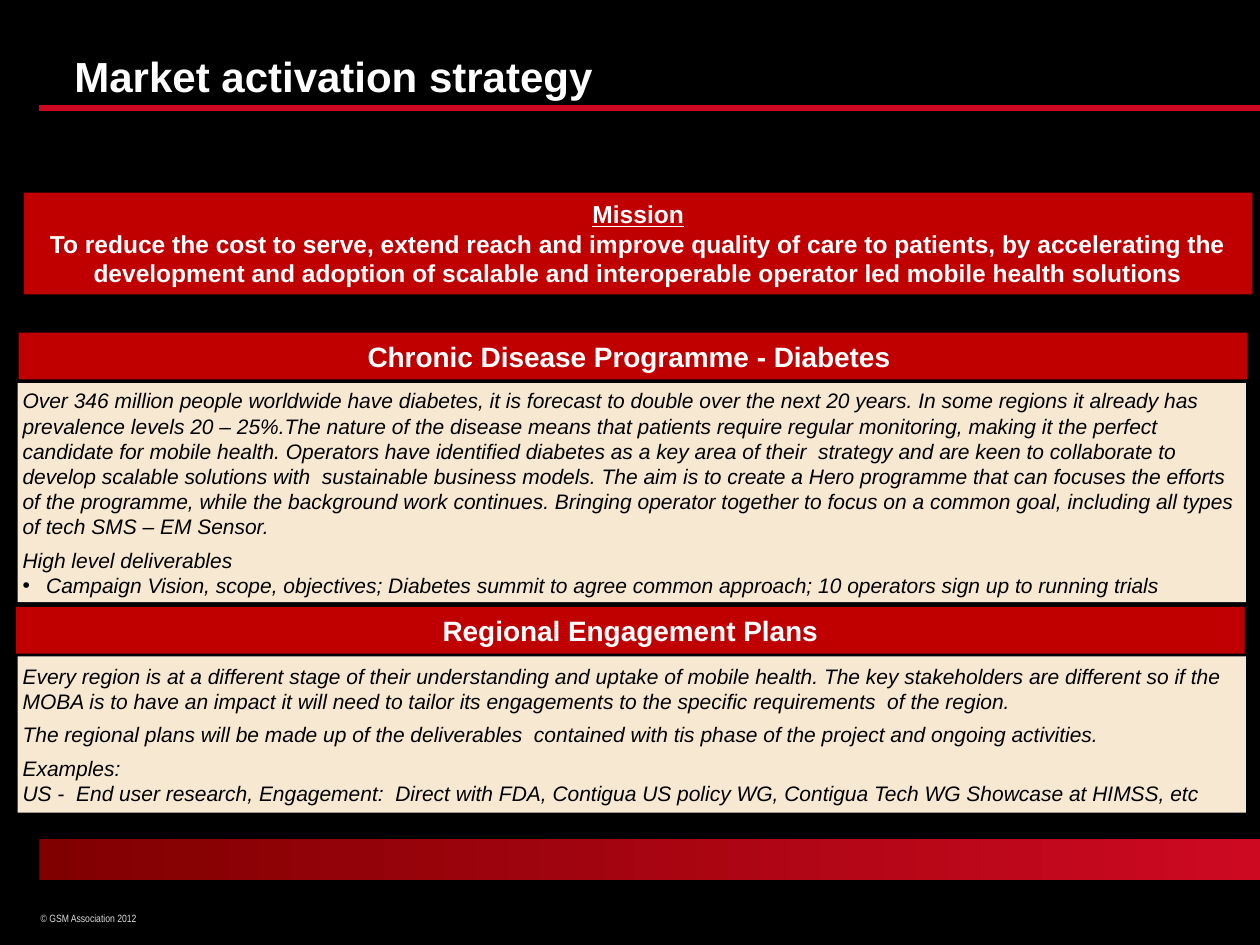
from lxml import etree
from pptx import Presentation
from pptx.dml.color import RGBColor
from pptx.enum.shapes import MSO_CONNECTOR, MSO_SHAPE
from pptx.enum.text import MSO_ANCHOR, PP_ALIGN
from pptx.oxml import parse_xml
from pptx.oxml.ns import nsdecls, qn
from pptx.util import Pt

RECTANGLE = MSO_SHAPE.RECTANGLE
STRAIGHT = MSO_CONNECTOR.STRAIGHT
TOP, MIDDLE = MSO_ANCHOR.TOP, MSO_ANCHOR.MIDDLE
LEFT, CENTER = PP_ALIGN.LEFT, PP_ALIGN.CENTER

COLOURS = {
    "black": "000000", "white": "FFFFFF", "grey": "DDDDDD", "heading": "C00000",
    "panel": "F7E8D1", "rule": "CD0921", "dark red": "800000",
}
TITLE = {"name": "Arial", "size": Pt(24), "bold": True, "colour": "white"}
MISSION = {**TITLE, "size": Pt(14)}
HEADING = {**TITLE, "size": Pt(16)}
BODY = {"name": "Arial", "size": Pt(12), "italic": True, "colour": "black"}
FOOTER = {"name": "Arial Narrow", "size": Pt(6), "colour": "grey"}

WIDE_INSETS = (7.2, 3.6, 7.2, 3.6)
PANEL_INSETS = (2.9, 3.6, 2.9, 3.6)
GAP = 4.6

PROGRAMME_TEXT = [
    ("Over 346 million people worldwide have diabetes, it is forecast to double over the "
     "next 20 years. In some regions it already has prevalence levels 20 – 25%.The nature "
     "of the disease means that patients require regular monitoring, making it the perfect "
     "candidate for mobile health. Operators have identified diabetes as a key area of "
     "their  strategy and are keen to collaborate to develop scalable solutions with  "
     "sustainable business models. The aim is to create a Hero programme that can focuses "
     "the efforts of the programme, while the background work continues. Bringing operator "
     "together to focus on a common goal, including all types of tech SMS – EM Sensor.", {}),
    ("High level deliverables", {"gap": GAP}),
    ("Campaign Vision, scope, objectives; Diabetes summit to agree common approach; "
     "10 operators sign up to running trials", {"bullet": True}),
]
REGIONAL_TEXT = [
    ("Every region is at a different stage of their understanding and uptake of mobile "
     "health. The key stakeholders are different so if the MOBA is to have an impact it "
     "will need to tailor its engagements to the specific requirements  of the region.", {}),
    ("The regional plans will be made up of the deliverables  contained with tis phase of "
     "the project and ongoing activities.", {"gap": GAP}),
    ("Examples:", {"gap": GAP}),
    ("US -  End user research, Engagement:  Direct with FDA, Contigua US policy WG, "
     "Contigua Tech WG Showcase at HIMSS, etc", {}),
]
MISSION_TEXT = [
    ("Mission", {"underline": True}),
    ("To reduce the cost to serve, extend reach and improve quality of care to patients, by "
     "accelerating the development and adoption of scalable and interoperable operator led "
     "mobile health solutions", {}),
]


def colour(name):
    return RGBColor.from_string(COLOURS[name])


def points(box):
    return [Pt(value) for value in box]


def format_font(font, values):
    for name, value in values.items():
        if name == "colour":
            font.color.rgb = colour(value)
        else:
            setattr(font, name, value)


def add_bullet(paragraph):
    properties = paragraph._p.get_or_add_pPr()
    properties.set("marL", str(Pt(13.5)))
    properties.set("indent", str(-Pt(13.5)))
    etree.SubElement(properties, qn("a:buFont")).set("typeface", "Arial")
    etree.SubElement(properties, qn("a:buChar")).set("char", "•")


def write_text(shape, lines, style, alignment=LEFT, anchor=MIDDLE, insets=WIDE_INSETS):
    frame = shape.text_frame
    frame.word_wrap = True
    frame.vertical_anchor = anchor
    for side, inset in zip(("left", "top", "right", "bottom"), insets):
        setattr(frame, f"margin_{side}", Pt(inset))
    for index, (text, options) in enumerate(lines):
        paragraph = frame.add_paragraph() if index else frame.paragraphs[0]
        paragraph.alignment = alignment
        if "gap" in options:
            paragraph.space_before = Pt(options["gap"])
        if "bullet" in options:
            add_bullet(paragraph)
        run = paragraph.add_run()
        run.text = text
        format_font(run.font, style)
        run.font.underline = options.get("underline", False)


def add_block(slide, box, fill):
    shape = slide.shapes.add_shape(RECTANGLE, *points(box))
    shape.shadow.inherit = False
    shape.line.fill.background()
    shape.fill.solid()
    shape.fill.fore_color.rgb = colour(fill)
    return shape


def add_title(slide, box):
    title = slide.shapes.title
    title.left, title.top, title.width, title.height = points(box)
    write_text(title, [("Market activation strategy", {})], TITLE, anchor=TOP,
               insets=(6.5, 5, 6.5, 3.6))


def add_rule(slide, left, top, right):
    rule = slide.shapes.add_connector(STRAIGHT, *points((left, top, right, top)))
    rule.line.color.rgb = colour("rule")
    rule.line.width = Pt(3.75)
    etree.SubElement(rule._element.spPr, qn("a:effectLst"))


def add_gradient_band(slide, box):
    band = add_block(slide, box, "rule")
    band.fill.gradient()
    band.fill.gradient_angle = 0
    for stop, name, position in zip(band.fill.gradient_stops, ("dark red", "rule"), (0, 1)):
        stop.color.rgb = colour(name)
        stop.position = position
    effects = band._element.spPr.find(qn("a:effectLst"))
    effects.append(parse_xml(
        f'<a:outerShdw {nsdecls("a")} blurRad="{Pt(3.1)}" dist="{Pt(1.8)}" dir="5400000">'
        f'<a:srgbClr val="{COLOURS["black"]}"><a:alpha val="35000"/></a:srgbClr>'
        '</a:outerShdw>'))


def add_footer(slide, box):
    footer = slide.shapes.add_textbox(*points(box))
    write_text(footer, [("© GSM Association 2012", {})], FOOTER, anchor=TOP,
               insets=(0.7, 3.6, 7.2, 3.6))


def add_heading(slide, box, lines, style=HEADING):
    write_text(add_block(slide, box, "heading"), lines, style, CENTER)


def add_panel(slide, box, lines):
    write_text(add_block(slide, box, "panel"), lines, BODY, insets=PANEL_INSETS)


def main():
    presentation = Presentation()
    presentation.slide_width, presentation.slide_height = Pt(720), Pt(540)
    slide = presentation.slides.add_slide(presentation.slide_layouts[5])
    slide.background.fill.solid()
    slide.background.fill.fore_color.rgb = colour("black")

    add_title(slide, (36, 24, 648, 54.5))
    add_rule(slide, 22.5, 61.8, 720)
    add_gradient_band(slide, (22.5, 479.5, 697.5, 23.3))
    add_footer(slide, (22.5, 517.7, 112.5, 14.5))

    width = 702
    add_heading(slide, (13.7, 110.1, width, 58.2), MISSION_TEXT, MISSION)
    add_heading(slide, (10.7, 190.1, width, 26.7),
                [("Chronic Disease Programme - Diabetes ", {})])
    add_panel(slide, (10, 218.9, width, 125.2), PROGRAMME_TEXT)
    add_panel(slide, (10, 375.1, width, 89.2), REGIONAL_TEXT)
    add_heading(slide, (9.2, 346.8, width, 26.7), [("Regional Engagement Plans", {})])
    presentation.save("out.pptx")


if __name__ == "__main__":
    main()
